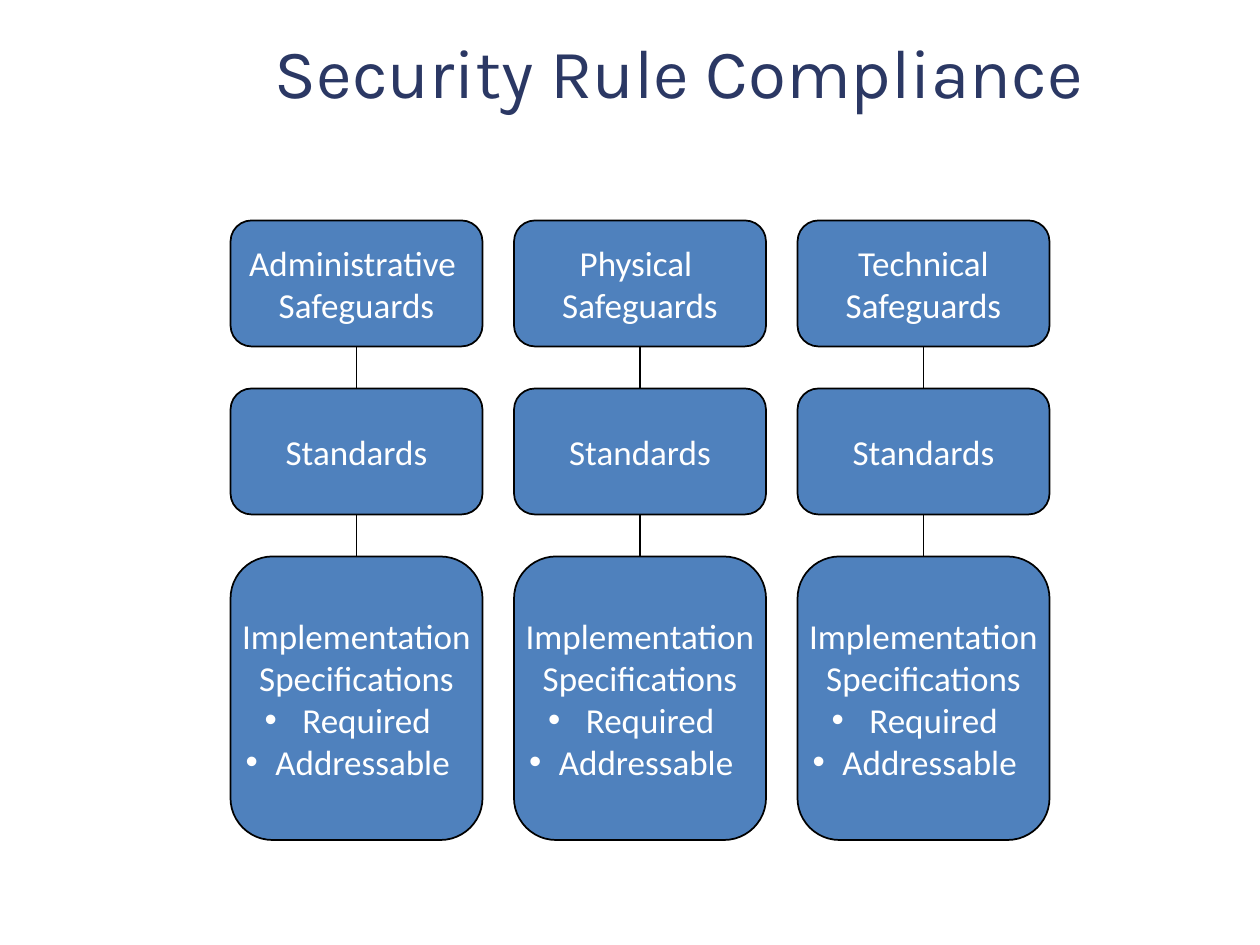
from dataclasses import dataclass

from lxml import etree
from pptx import Presentation, util as u
from pptx.dml.color import RGBColor
from pptx.enum import shapes, text
from pptx.oxml.ns import qn


@dataclass(frozen=True)
class Theme:
    title_color: str = "2B3864"
    box_fill: str = "4F81BD"
    box_text: str = "FFFFFF"
    outline: str = "000000"
    title_font: str = "Karla"
    body_font: str = "Calibri"
    title_size: float = 39.6
    body_size: float = 20
    line_width: float = 1


# Grid in inches: equal columns, and rows given by height with one gap
LEFT, TOP = 1.83, 1.75
BOX_WIDTH, COLUMN_STEP = 2, 2.25
ROW_HEIGHTS = [1, 1, 2.25]
ROW_GAP = 1 / 3


class SlideBuilder:
    def __init__(self, deck, theme):
        self.theme = theme
        self.slide = deck.slides.add_slide(deck.slide_layouts[5])

    def style_font(self, paragraph, name, size, color):
        for run in paragraph.runs:
            run.font.name = name
            run.font.size = u.Pt(size)
            run.font.color.rgb = RGBColor.from_string(color)

    def style_line(self, line):
        line.color.rgb = RGBColor.from_string(self.theme.outline)
        line.width = u.Pt(self.theme.line_width)

    def title(self, wording, left, top, width, height):
        heading = self.slide.shapes.title
        heading.left, heading.top = u.Inches(left), u.Inches(top)
        heading.width, heading.height = u.Inches(width), u.Inches(height)
        frame = heading.text_frame
        frame.text = wording
        frame.word_wrap = True
        frame.vertical_anchor = text.MSO_ANCHOR.MIDDLE
        paragraph = frame.paragraphs[0]
        paragraph.alignment = text.PP_ALIGN.LEFT
        self.style_font(paragraph, self.theme.title_font,
                        self.theme.title_size, self.theme.title_color)

    def row_top(self, row):
        return TOP + sum(ROW_HEIGHTS[:row]) + row * ROW_GAP

    def box(self, column, row, lines, bullets=()):
        box = self.slide.shapes.add_shape(
            shapes.MSO_SHAPE.FLOWCHART_ALTERNATE_PROCESS,
            u.Inches(LEFT + column * COLUMN_STEP), u.Inches(self.row_top(row)),
            u.Inches(BOX_WIDTH), u.Inches(ROW_HEIGHTS[row]))
        box.shadow.inherit = False
        box.fill.solid()
        box.fill.fore_color.rgb = RGBColor.from_string(self.theme.box_fill)
        self.style_line(box.line)
        frame = box.text_frame
        frame.text = "\n".join([*lines, *bullets])
        frame.word_wrap = False
        frame.vertical_anchor = text.MSO_ANCHOR.MIDDLE
        for index, paragraph in enumerate(frame.paragraphs):
            paragraph.alignment = text.PP_ALIGN.CENTER
            if index >= len(lines):
                properties = paragraph._p.get_or_add_pPr()
                etree.SubElement(properties, qn("a:buFont"), typeface="Arial")
                etree.SubElement(properties, qn("a:buChar"), char="•")
            self.style_font(paragraph, self.theme.body_font,
                            self.theme.body_size, self.theme.box_text)

    def link_below(self, column, row):
        center = u.Inches(LEFT + column * COLUMN_STEP + BOX_WIDTH / 2)
        link = self.slide.shapes.add_connector(
            shapes.MSO_CONNECTOR.STRAIGHT,
            center, u.Inches(self.row_top(row) + ROW_HEIGHTS[row]),
            center, u.Inches(self.row_top(row + 1)))
        self.style_line(link.line)
        etree.SubElement(link._element.spPr, qn("a:effectLst"))


def main():
    deck = Presentation()
    deck.slide_width, deck.slide_height = u.Inches(10), u.Inches(7.5)
    builder = SlideBuilder(deck, Theme())
    builder.title("Security Rule Compliance", 2.08, 0.25, 7.5, 0.62)

    # One column per safeguard, linked from top to bottom
    for column, safeguard in enumerate(["Administrative ", "Physical ", "Technical"]):
        builder.box(column, 0, [safeguard, "Safeguards"])
        builder.box(column, 1, ["Standards"])
        builder.box(column, 2, ["Implementation", "Specifications"],
                    bullets=[" Required", "Addressable"])
        for row in range(len(ROW_HEIGHTS) - 1):
            builder.link_below(column, row)

    deck.save("out.pptx")


if __name__ == "__main__":
    main()
